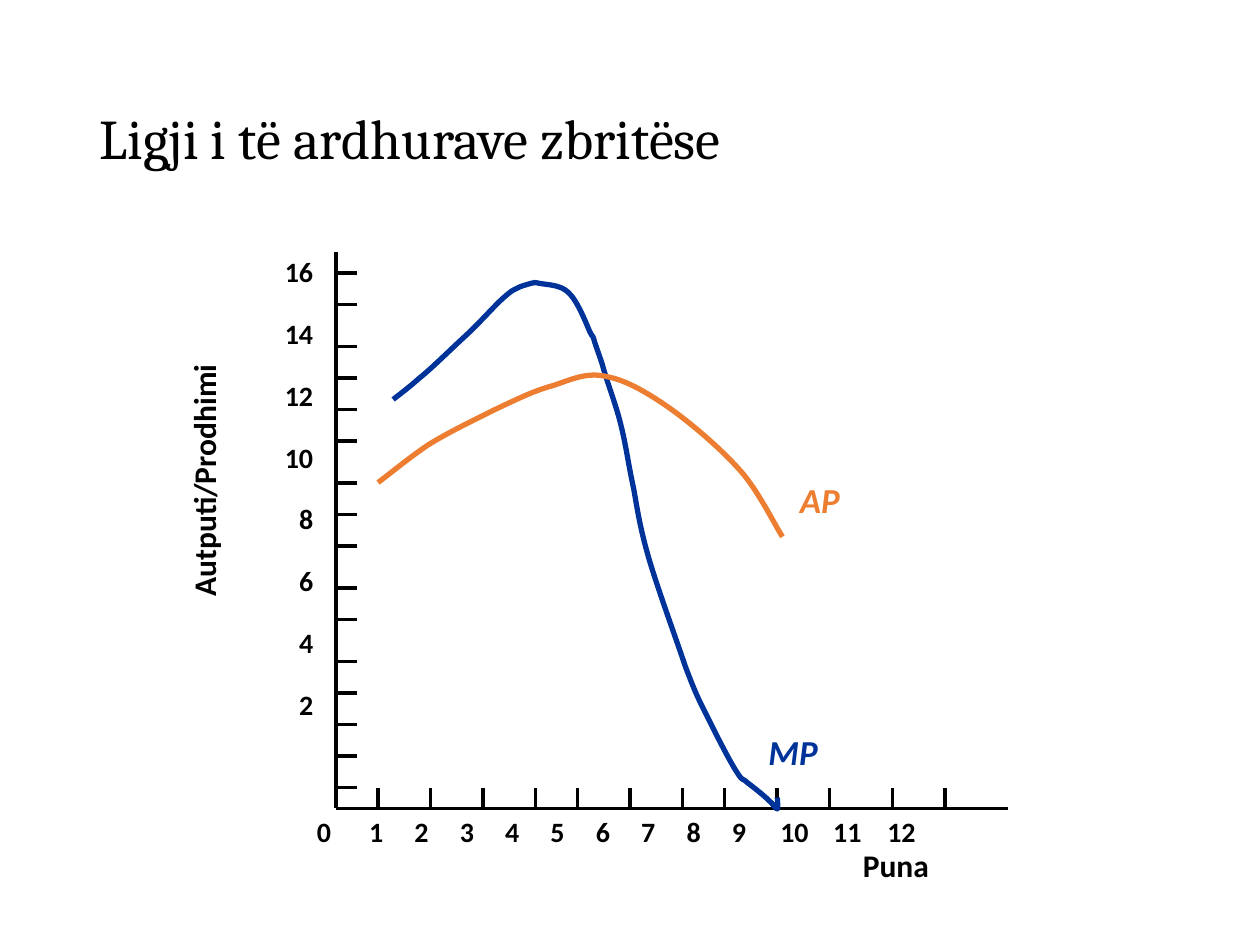
"""Build the slide on diminishing returns with its AP and MP curves."""
import pptx
import pptx.util
import pptx.dml.color
import pptx.enum.shapes
import pptx.enum.text
import pptx.oxml
import pptx.oxml.ns

HUES = {"ink": "000000", "mp": "003399", "ap": "ED7D31"}
UNIT = 1 / 12
LEFT, BASE, TOP, END = 32, 77, 24, 96
TICK = 2
ROWS = [26, 29, 33, 36, 39, 42, 46, 49, 52, 56, 59, 63, 66, 69, 72, 75]
COLS = [36, 41, 46, 51, 55, 60, 65, 69, 74, 79, 85, 90]
STOPS = [0.47 + 0.36 * n for n in range(9)] + [3.79, 4.21, 4.64]
ALIGN = pptx.enum.text.PP_ALIGN
MP = [
    (312, 317), (316, 314), (324, 308), (333, 300), (343, 292), (358, 277),
    (369, 267), (381, 256), (393, 242), (400, 236), (407, 230), (406, 231),
    (410, 229), (413, 227), (418, 226), (421, 225), (424, 224), (424, 224),
    (429, 225), (434, 226), (445, 226), (451, 232), (458, 238), (465, 256),
    (468, 263), (471, 269), (469, 264), (471, 268), (472, 272), (474, 277),
    (478, 289), (481, 301), (489, 321), (493, 338), (497, 354), (499, 370),
    (503, 388), (506, 405), (508, 419), (515, 443), (522, 467), (537, 508),
    (544, 529), (552, 550), (554, 554), (561, 568), (568, 582), (579, 604),
    (585, 613), (590, 621), (589, 617), (593, 621), (597, 624), (606, 631),
    (610, 635), (614, 638), (615, 642), (617, 642), (618, 641), (617, 638),
    (617, 633),
]
AP = [
    (300, 383), (307, 378), (325, 363), (340, 353), (356, 343), (377, 333),
    (393, 325), (410, 317), (424, 310), (439, 306), (454, 301), (466, 295),
    (482, 299), (498, 302), (516, 313), (533, 325), (551, 338), (573, 357),
    (588, 374), (602, 390), (614, 415), (621, 426),
]


def grid(n):
    """Turn grid steps into a length."""
    return pptx.util.Inches(n * UNIT)


def tint(hue):
    """Look up a colour by name."""
    return pptx.dml.color.RGBColor.from_string(HUES[hue])


def put(thing, vals):
    """Set attributes from a dict of values."""
    for name, val in vals.items():
        setattr(thing, name, val)


def style(para, text, size, hue="ink", face="Calibri", bold=True, slant=None):
    """Write one run with its font."""
    run = para.add_run()
    run.text = text
    put(run.font, {"size": pptx.util.Pt(size), "name": face,
                   "bold": bold, "italic": slant})
    run.font.color.rgb = tint(hue)


def label(slide, box, lines, size, form=None, turn=0, **font):
    """Add a text box with one paragraph per line."""
    shape = slide.shapes.add_textbox(*map(grid, box))
    shape.rotation = turn
    frame = shape.text_frame
    put(frame, {"word_wrap": True,
                "auto_size": pptx.enum.text.MSO_AUTO_SIZE.SHAPE_TO_FIT_TEXT})
    for n, line in enumerate(lines):
        para = frame.add_paragraph() if n else frame.paragraphs[0]
        put(para, form or {})
        style(para, line, size, **font)
    return frame


def rule(slide, *ends):
    """Draw a straight black line between two grid points."""
    line = slide.shapes.add_connector(
        pptx.enum.shapes.MSO_CONNECTOR.STRAIGHT, *map(grid, ends))
    line.line.color.rgb = tint("ink")
    line.line.width = pptx.util.Pt(2.25)
    props = line.element.spPr
    props.append(props.makeelement(pptx.oxml.ns.qn("a:effectLst"), {}))


def curve(slide, dots, hue):
    """Draw a Bezier curve whose points are in hundredths of an inch."""
    pen = slide.shapes.build_freeform(*dots[0], scale=9144)
    pen.add_line_segments(dots[1:], close=False)
    shape = pen.convert_to_shape()
    shape.shadow.inherit = False
    shape.fill.background()
    shape.line.color.rgb = tint(hue)
    shape.line.width = pptx.util.Pt(3)
    track = shape.element.find(".//" + pptx.oxml.ns.qn("a:path"))
    steps = list(track)[1:]
    for n in range(0, len(steps), 3):
        bend = track.makeelement(pptx.oxml.ns.qn("a:cubicBezTo"), {})
        track.append(bend)
        for step in steps[n:n + 3]:
            bend.append(step[0])
            track.remove(step)


def tabs(para, stops):
    """Give a paragraph centred tab stops in inches."""
    props = para._p.get_or_add_pPr()
    group = props.makeelement(pptx.oxml.ns.qn("a:tabLst"), {})
    props.append(group)
    for stop in stops:
        place = str(int(pptx.util.Inches(stop)))
        group.append(group.makeelement(
            pptx.oxml.ns.qn("a:tab"), {"pos": place, "algn": "ctr"}))


def head(slide, text):
    """Place and format the title."""
    title = slide.shapes.title
    put(title, dict(zip(("left", "top", "width", "height"),
                        map(pptx.util.Inches, (0.69, 0.4, 8.62, 1.45)))))
    put(title.text_frame, {
        "vertical_anchor": pptx.enum.text.MSO_ANCHOR.MIDDLE,
        "auto_size": pptx.enum.text.MSO_AUTO_SIZE.NONE, "word_wrap": True})
    para = title.text_frame.paragraphs[0]
    put(para, {"alignment": ALIGN.LEFT, "line_spacing": 0.9})
    style(para, text, 32, face="Cambria", bold=False)


def axes(slide):
    """Draw both axes with ticks and numbers."""
    rule(slide, LEFT, TOP, LEFT, BASE)
    rule(slide, LEFT, BASE, END, BASE)
    for row in ROWS:
        rule(slide, LEFT, row, LEFT + TICK, row)
    for col in COLS:
        rule(slide, col, BASE, col, BASE - TICK)
    form = {"alignment": ALIGN.RIGHT, "line_spacing": 0.9,
            "space_before": pptx.util.Pt(18.1)}
    label(slide, (21, TOP, 10, 54.7), map(str, range(16, 0, -2)), 16, form)
    marks = "\t".join(map(str, range(13)))
    frame = label(slide, (29, BASE, 78, 4.4), [marks], 16)
    tabs(frame.paragraphs[0], STOPS)


def main():
    """Build and save the slide."""
    deck = pptx.Presentation()
    put(deck, {"slide_width": pptx.util.Inches(10),
               "slide_height": pptx.util.Inches(7.5)})
    slide = deck.slides.add_slide(deck.slide_layouts[5])
    head(slide, "Ligji i të ardhurave zbritëse")
    axes(slide)
    label(slide, (81, 80, 13, 4.8), ["Puna"], 18)
    label(slide, (5.9, 42.1, 27, 4.8), ["Autputi/Prodhimi"], 18, turn=270)
    label(slide, (75, 45, 8, 5.2), ["AP"], 20, hue="ap", slant=True)
    label(slide, (72, 69, 9, 5.2), ["MP"], 20, hue="mp", slant=True)
    curve(slide, MP, "mp")
    curve(slide, AP, "ap")
    deck.save("out.pptx")


if __name__ == "__main__":
    main()
